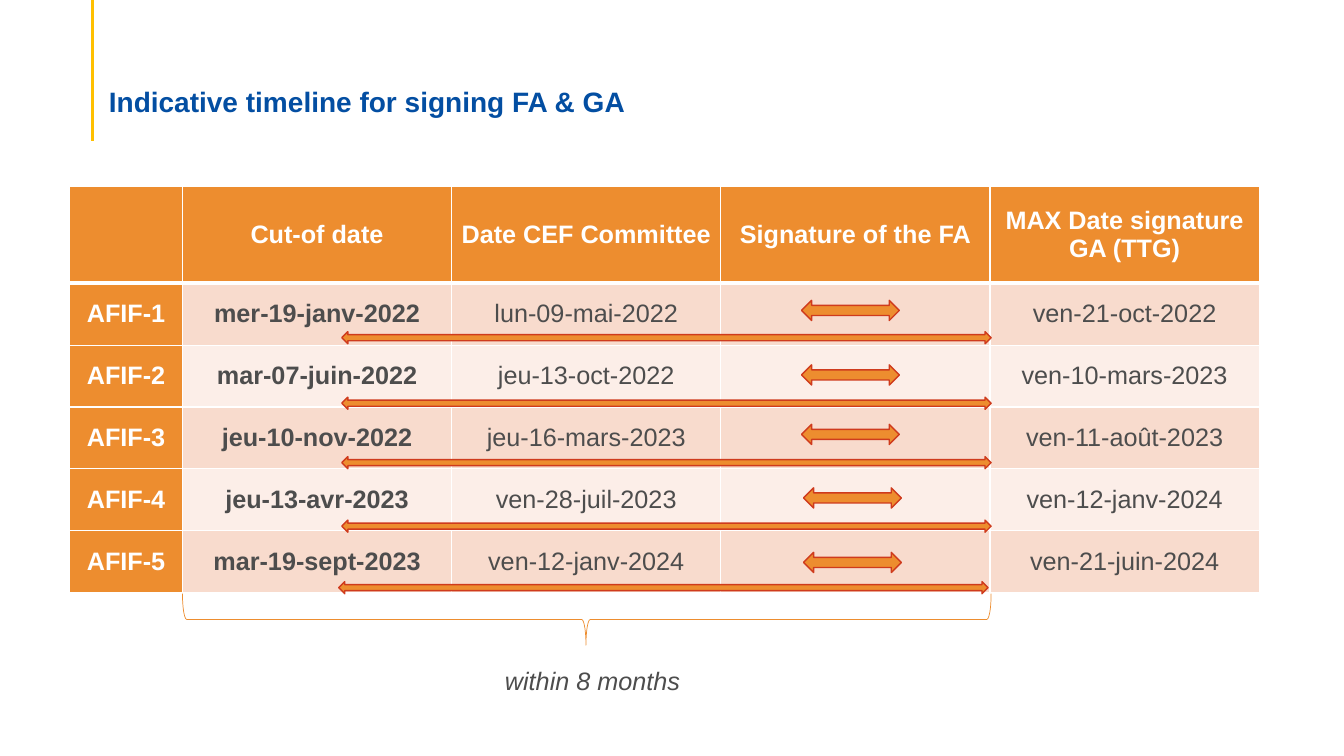
from lxml import etree
from pptx import Presentation
from pptx import util as u
from pptx.dml.color import RGBColor
from pptx.enum import shapes, text
from pptx.oxml import ns

ORANGE = RGBColor(0xED, 0x8D, 0x2F)
RED = RGBColor(0xCF, 0x3B, 0x1D)
GOLD = RGBColor(0xFF, 0xC0, 0x00)
BLUE = RGBColor(0x03, 0x4E, 0xA2)
GREY = RGBColor(0x4D, 0x4D, 0x4D)
WHITE = RGBColor(0xFF, 0xFF, 0xFF)
ROW_FILLS = [RGBColor(0xF8, 0xDB, 0xCD), RGBColor(0xFC, 0xEE, 0xE8)]

TIMELINE = [
    ["", "Cut-of date", "Date CEF Committee", "Signature of the FA", "MAX Date signature GA (TTG)"],
    ["AFIF-1", "mer-19-janv-2022", "lun-09-mai-2022", "", "ven-21-oct-2022"],
    ["AFIF-2", "mar-07-juin-2022", "jeu-13-oct-2022", "", "ven-10-mars-2023"],
    ["AFIF-3", "jeu-10-nov-2022", "jeu-16-mars-2023", "", "ven-11-août-2023"],
    ["AFIF-4", "jeu-13-avr-2023", "ven-28-juil-2023", "", "ven-12-janv-2024"],
    ["AFIF-5", "mar-19-sept-2023", "ven-12-janv-2024", "", "ven-21-juin-2024"],
]
COLUMN_WIDTHS = [1.12] + [2.67] * 4
ROW_HEIGHTS = [0.96] + [0.614] * 5
SIGNATURE_ARROWS = [(7.26, 1.13), (7.26, 1.77), (7.26, 2.36), (7.28, 2.99), (7.28, 3.63)]
PERIOD_ARROWS = [(2.7, 1.44), (2.7, 2.09), (2.7, 2.68), (2.7, 3.31), (2.67, 3.92)]


def style_font(font, size, color, bold=False, italic=False):
    font.name = "Arial"
    font.size = u.Pt(size)
    font.color.rgb = color
    font.bold = bold
    font.italic = italic


def add_title(slide, left, top, width, height):
    rule = slide.shapes.add_connector(
        shapes.MSO_CONNECTOR.STRAIGHT,
        u.Inches(left - 0.06), 0, u.Inches(left - 0.06), u.Inches(top + 0.62))
    rule.line.color.rgb = GOLD
    rule.line.width = u.Pt(2.25)
    etree.SubElement(rule._element.spPr, ns.qn("a:effectLst"))

    title = slide.shapes.title
    title.left, title.top = u.Inches(left), u.Inches(top)
    title.width, title.height = u.Inches(width), u.Inches(height)
    frame = title.text_frame
    frame.text = "Indicative timeline for signing FA & GA"
    frame.word_wrap = True
    frame.auto_size = text.MSO_AUTO_SIZE.NONE
    frame.vertical_anchor = text.MSO_ANCHOR.BOTTOM
    frame.margin_left = frame.margin_right = u.Inches(0.1)
    frame.margin_top, frame.margin_bottom = u.Inches(0.05), 0
    paragraph = frame.paragraphs[0]
    paragraph.alignment = text.PP_ALIGN.LEFT
    paragraph.line_spacing = 0.9
    style_font(paragraph.runs[0].font, 20, BLUE, bold=True)


def add_borders(cell, bottom_width):
    properties = cell._tc.get_or_add_tcPr()
    for side, width in (("L", 1), ("R", 1), ("T", 1), ("B", bottom_width)):
        line = etree.SubElement(properties, ns.qn(f"a:ln{side}"), w=str(u.Pt(width)))
        fill = etree.SubElement(line, ns.qn("a:solidFill"))
        etree.SubElement(fill, ns.qn("a:srgbClr"), val=str(WHITE))


def format_cell(cell, row, column):
    heading = row == 0 or column == 0
    add_borders(cell, 3 if row == 0 else 1)
    cell.fill.solid()
    cell.fill.fore_color.rgb = ORANGE if heading else ROW_FILLS[(row - 1) % 2]
    cell.vertical_anchor = text.MSO_ANCHOR.MIDDLE
    cell.margin_left = cell.margin_right = u.Inches(0.07)
    cell.margin_top = cell.margin_bottom = 0
    paragraph = cell.text_frame.paragraphs[0]
    paragraph.alignment = text.PP_ALIGN.CENTER
    for run in paragraph.runs:
        style_font(run.font, 18, WHITE if heading else GREY, bold=heading or column == 1)


def add_timeline_table(slide, left, top):
    table = slide.shapes.add_table(
        len(TIMELINE), len(COLUMN_WIDTHS), u.Inches(left), u.Inches(top),
        u.Inches(sum(COLUMN_WIDTHS)), u.Inches(sum(ROW_HEIGHTS))).table
    for column, width in zip(table.columns, COLUMN_WIDTHS):
        column.width = u.Inches(width)
    for row, height in zip(table.rows, ROW_HEIGHTS):
        row.height = u.Inches(height)
    for row, values in enumerate(TIMELINE):
        for column, value in enumerate(values):
            cell = table.cell(row, column)
            cell.text = value
            format_cell(cell, row, column)


def add_arrows(slide, left, top, offsets, width, height):
    for across, down in offsets:
        arrow = slide.shapes.add_shape(
            shapes.MSO_SHAPE.LEFT_RIGHT_ARROW, u.Inches(left + across),
            u.Inches(top + down), u.Inches(width), u.Inches(height))
        arrow.shadow.inherit = False
        arrow.fill.solid()
        arrow.fill.fore_color.rgb = ORANGE
        arrow.line.color.rgb = RED
        arrow.line.width = u.Pt(1)


def add_duration(slide, left, top, width, height):
    brace = slide.shapes.add_shape(
        shapes.MSO_SHAPE.LEFT_BRACE, u.Inches(left + (width - height) / 2),
        u.Inches(top + (height - width) / 2), u.Inches(height), u.Inches(width))
    brace.rotation = 270
    brace.adjustments[0] = 0.083
    brace.adjustments[1] = 0.499
    brace.shadow.inherit = False
    brace.fill.background()
    brace.line.color.rgb = ORANGE
    brace.line.width = u.Pt(0.5)

    label = slide.shapes.add_textbox(
        u.Inches(left + 3.1), u.Inches(top + height + 0.15), u.Inches(2.05), u.Inches(0.4))
    frame = label.text_frame
    frame.word_wrap = True
    frame.auto_size = text.MSO_AUTO_SIZE.SHAPE_TO_FIT_TEXT
    frame.text = "within 8 months"
    style_font(frame.paragraphs[0].runs[0].font, 18, GREY, italic=True)


def main():
    presentation = Presentation()
    presentation.slide_width = u.Inches(13.33)
    presentation.slide_height = u.Inches(7.5)
    slide = presentation.slides.add_slide(presentation.slide_layouts[5])
    add_title(slide, 0.98, 0.78, 11.5, 0.4)
    table_left, table_top = 0.69, 1.85
    add_timeline_table(slide, table_left, table_top)
    add_arrows(slide, table_left, table_top, SIGNATURE_ARROWS, 0.97, 0.2)
    add_arrows(slide, table_left, table_top, PERIOD_ARROWS, 6.44, 0.12)
    add_duration(slide, table_left + COLUMN_WIDTHS[0], 5.89, 8.02, 0.51)
    presentation.save("out.pptx")


if __name__ == "__main__":
    main()
